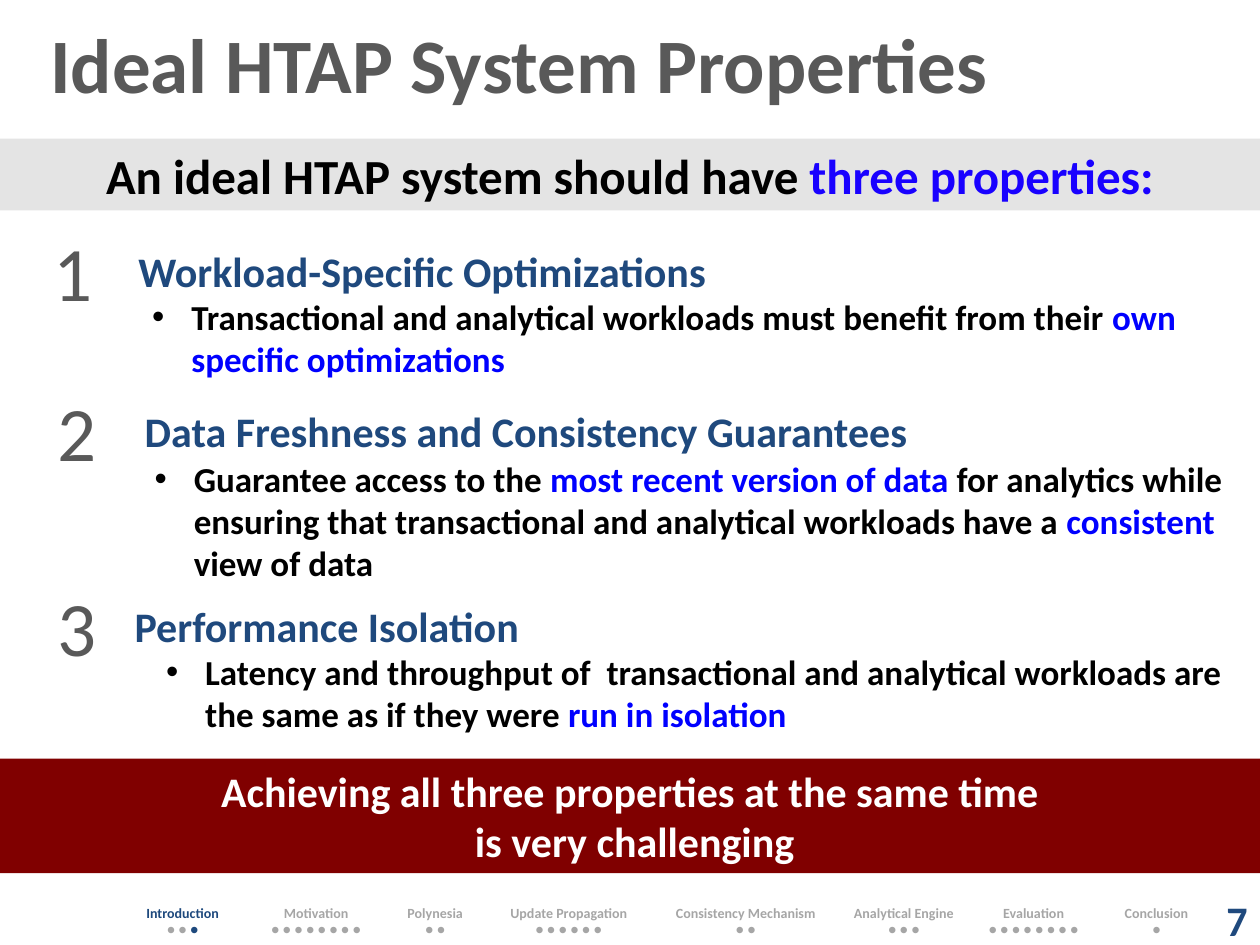
from lxml.etree import SubElement as Sub
from pptx import Presentation
from pptx.dml.color import RGBColor as Rgb
from pptx.enum.shapes import MSO_SHAPE as Shape
from pptx.enum.text import MSO_ANCHOR as Anchor, PP_ALIGN as Align
from pptx.oxml.ns import qn
from pptx.util import Inches, Pt

HUES = {"gray": "595959", "navy": "1F497D", "black": "000000", "blue": "0000FF",
        "vivid": "1901FF", "pale": "E4E4E4", "red": "800000", "white": "FFFFFF",
        "active": "1E497D", "dim": "A6A6A6"}

TITLE = "Ideal HTAP System Properties"
LEAD = [("An ideal HTAP system should have ", "black"), ("three properties:", "vivid")]
CLOSE = [("Achieving all three properties at the same time", "white"),
         ("\n", "white"), (" is very challenging", "white")]
ITEMS = [
    {"num": (0.33, 1.73), "head": (1, 1.9, 9), "body": (1.11, 2.3, 8.75, 0.77),
     "name": "Workload-Specific Optimizations",
     "text": [("Transactional and analytical workloads must benefit from their ", "black"),
              ("own specific optimizations", "blue")]},
    {"num": (0.36, 3), "head": (1.05, 3.17, 8.75), "body": (1.13, 3.58, 8.67, 1.11),
     "name": "Data Freshness and Consistency Guarantees",
     "text": [("Guarantee access to the ", "black"),
              ("most recent version of data ", "blue"),
              ("for analytics while ensuring that transactional and analytical "
               "workloads have a ", "black"),
              ("consistent", "blue"), (" view of data", "black")]},
    {"num": (0.36, 4.55), "head": (0.97, 4.72, 9), "body": (1.22, 5.11, 8.75, 0.77),
     "name": "Performance Isolation",
     "text": [("Latency and throughput of  transactional and analytical workloads are "
               "the same as if they were ", "black"),
              ("run in isolation", "blue")]},
]
STEPS = [("Introduction", 3, 0.98), ("Motivation", 8, 1.14), ("Polynesia", 2, 0.75),
         ("Update Propagation", 6, 1.37), ("Consistency Mechanism", 2, 1.44),
         ("Analytical Engine", 3, 1.07), ("Evaluation", 8, 0.99), ("Conclusion", 1, 0.96)]


def write(frame, runs, size, bold=True, align=Align.LEFT, bullet=False):
    """Fill a text frame with (text, colour) runs."""
    frame.word_wrap = True
    par = frame.paragraphs[0]
    par.alignment = align
    if bullet:
        props = par._p.get_or_add_pPr()
        props.set("marL", str(Inches(0.31)))
        props.set("indent", str(-Inches(0.31)))
        Sub(props, qn("a:buFont"), typeface="Arial")
        Sub(props, qn("a:buChar"), char="•")
    for text, hue in runs:
        if text == "\n":
            par.add_line_break()
            continue
        run = par.add_run()
        run.text = text
        font = run.font
        font.name, font.size, font.bold = "Calibri", Pt(size), bold
        font.color.rgb = Rgb.from_string(HUES[hue])


def label(slide, box, runs, size, **style):
    """Add a text box and return its frame."""
    frame = slide.shapes.add_textbox(*map(Inches, box)).text_frame
    write(frame, runs, size, **style)
    return frame


def band(slide, top, high, hue, runs, size):
    """Add a full-width coloured band with centred text."""
    bar = slide.shapes.add_shape(Shape.RECTANGLE, 0, Inches(top), Inches(10), Inches(high))
    bar.shadow.inherit = False
    bar.fill.solid()
    bar.fill.fore_color.rgb = Rgb.from_string(HUES[hue])
    bar.line.fill.background()
    write(bar.text_frame, runs, size, align=Align.CENTER)


def track(slide):
    """Add the progress table along the foot of the slide."""
    grid = slide.shapes.add_table(2, len(STEPS), Inches(0.96), Inches(7.18),
                                  Inches(8.7), Inches(0.27)).table
    grid.first_row = grid.horz_banding = False
    for row in grid.rows:
        row.height = Inches(0.1)
    for col, (name, count, wide) in enumerate(STEPS):
        grid.columns[col].width = Inches(wide)
        dots = " ".join("●" * count)
        if col == 0:
            rows = [[(name, "active")], [(dots[:-1], "dim"), (dots[-1], "active")]]
        else:
            rows = [[(name, "dim")], [(dots, "dim")]]
        for row, runs in enumerate(rows):
            cell = grid.cell(row, col)
            cell.fill.background()
            cell.margin_left = cell.margin_right = 0
            cell.margin_top = cell.margin_bottom = 0
            write(cell.text_frame, runs, 8, bold=row == 0, align=Align.CENTER)


def main():
    """Build and save the slide."""
    deck = Presentation()
    deck.slide_width, deck.slide_height = Inches(10), Inches(7.5)
    slide = deck.slides.add_slide(deck.slide_layouts[5])

    title = slide.shapes.title
    title.left, title.top, title.width, title.height = map(Inches, (0, 0, 10, 1))
    frame = title.text_frame
    frame.margin_left = Inches(0.4)
    frame.vertical_anchor = Anchor.MIDDLE
    write(frame, [(TITLE, "gray")], 44)

    for num, item in enumerate(ITEMS, 1):
        label(slide, (*item["num"], 0.52, 0.84), [(str(num), "gray")], 44, bold=False)
        label(slide, (*item["head"], 0.5), [(item["name"], "navy")], 24)
        label(slide, item["body"], item["text"], 20, bullet=True)

    band(slide, 1.1, 0.57, "pale", LEAD, 28)
    band(slide, 6.02, 0.91, "red", CLOSE, 24)
    page = label(slide, (8, 7.1, 2, 0.4), [("7", "navy")], 24, align=Align.RIGHT)
    page.vertical_anchor = Anchor.MIDDLE
    track(slide)
    deck.save("out.pptx")


if __name__ == "__main__":
    main()
